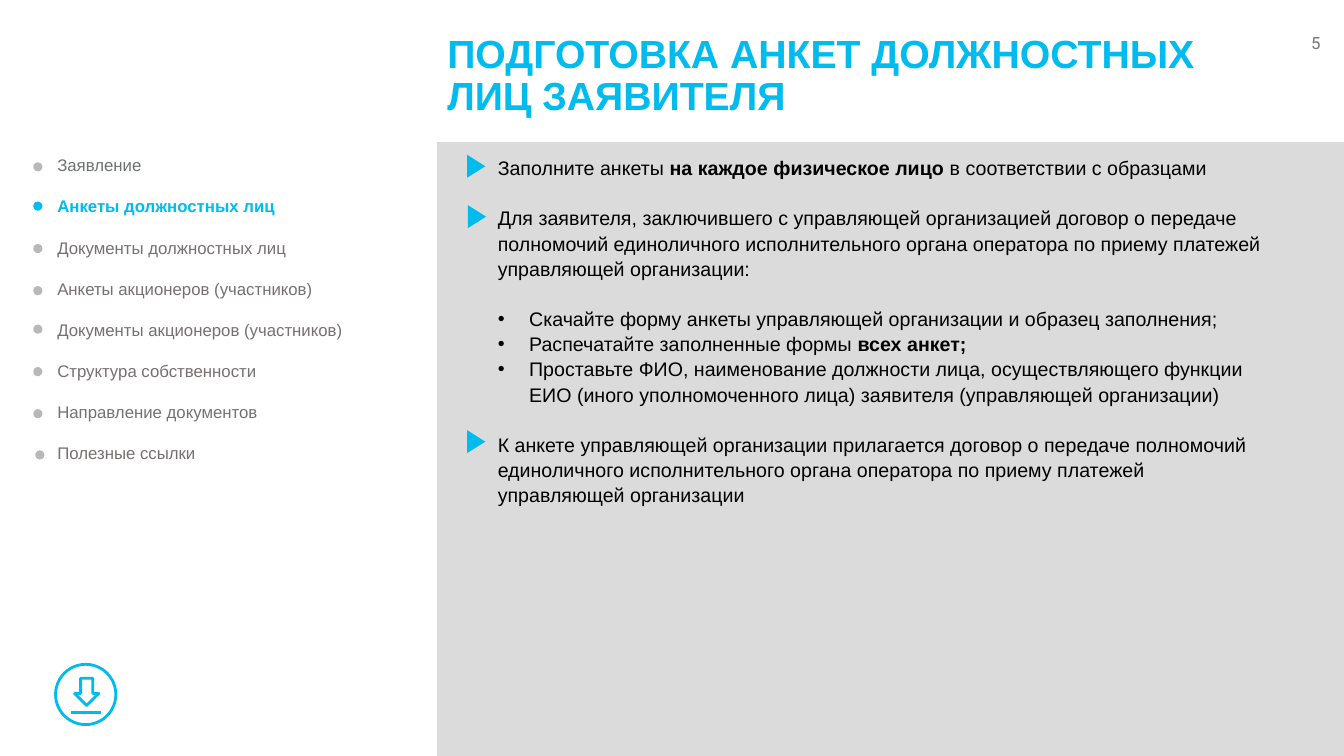
"""Build the slide about preparing questionnaires of the applicant's officers."""
from lxml.etree import SubElement
from pptx import Presentation
from pptx.dml.color import RGBColor
from pptx.enum.shapes import MSO_CONNECTOR, MSO_SHAPE
from pptx.enum.text import MSO_ANCHOR, MSO_AUTO_SIZE, PP_ALIGN
from pptx.oxml.ns import qn
from pptx.util import Cm, Pt

CYAN = RGBColor(0x00, 0xBB, 0xEE)
PANEL_GREY = RGBColor(0xDB, 0xDB, 0xDC)
DOT_GREY = RGBColor(0xB7, 0xB8, 0xB9)
FIRST_GREY = RGBColor(0x6F, 0x71, 0x71)
MENU_GREY = RGBColor(0x76, 0x71, 0x71)
NUMBER_GREY = RGBColor(0x74, 0x77, 0x7B)
BLACK = RGBColor(0x00, 0x00, 0x00)

TITLE = "ПОДГОТОВКА АНКЕТ ДОЛЖНОСТНЫХ ЛИЦ ЗАЯВИТЕЛЯ"
MENU = [
    ("Заявление", 0.84, 4.09),
    ("Анкеты должностных лиц", 0.84, 5.08),
    ("Документы должностных лиц", 0.84, 6.15),
    ("Анкеты акционеров (участников)", 0.84, 7.21),
    ("Документы акционеров (участников)", 0.84, 8.18),
    ("Структура собственности", 0.84, 9.25),
    ("Направление документов", 0.84, 10.31),
    ("Полезные ссылки", 0.89, 11.35),
]
CURRENT = 1
STEPS = [
    (False, 0, [("Заполните анкеты ", False),
                ("на каждое физическое лицо ", True),
                ("в соответствии с образцами", False)]),
    (False, 18, [("Для заявителя, заключившего с управляющей организацией договор "
                  "о передаче полномочий единоличного исполнительного органа "
                  "оператора по приему платежей управляющей организации:", False)]),
    (True, 18, [("Скачайте форму анкеты управляющей организации и образец "
                 "заполнения;", False)]),
    (True, 0, [("Распечатайте заполненные формы ", False), ("всех анкет;", True)]),
    (True, 0, [("Проставьте ФИО, наименование должности лица, осуществляющего "
                "функции ЕИО (иного уполномоченного лица) заявителя "
                "(управляющей организации)", False)]),
    (False, 18, [("К анкете управляющей организации прилагается договор о передаче "
                  "полномочий единоличного исполнительного органа оператора по "
                  "приему платежей управляющей организации", False)]),
]
MARKERS = [(11.71, 3.96), (11.73, 5.23), (11.71, 10.9)]


def place(box, left, top, width, height, anchor=MSO_ANCHOR.TOP):
    """Move a text holder and fix its frame settings."""
    box.left, box.top, box.width, box.height = map(Cm, (left, top, width, height))
    frame = box.text_frame
    frame.word_wrap = True
    frame.auto_size = MSO_AUTO_SIZE.NONE
    frame.vertical_anchor = anchor
    return frame


def add_span(para, text, size, colour, bold=False, font="Arial"):
    """Append one formatted run."""
    span = para.add_run()
    span.text = text
    span.font.name = font
    span.font.size = Pt(size)
    span.font.bold = bold
    span.font.color.rgb = colour


def next_paragraph(frame, number):
    """Return the first paragraph or a new one."""
    return frame.add_paragraph() if number else frame.paragraphs[0]


def set_bullet(para, bulleted, margin=0.0, indent=0.0):
    """Set the bullet and the indents of a list paragraph."""
    properties = para._p.get_or_add_pPr()
    properties.set("marL", str(Cm(margin)))
    properties.set("indent", str(Cm(indent)))
    if bulleted:
        SubElement(properties, qn("a:buFont"), typeface="Arial")
        SubElement(properties, qn("a:buChar"), char="•")
    else:
        SubElement(properties, qn("a:buNone"))


def add_figure(page, kind, left, top, width, height, fill=None):
    """Add a filled shape, or a cyan outline when no fill is given."""
    figure = page.shapes.add_shape(kind, *map(Cm, (left, top, width, height)))
    figure.shadow.inherit = False
    if fill is None:
        figure.fill.background()
        figure.line.color.rgb = CYAN
        figure.line.width = Pt(2)
    else:
        figure.fill.solid()
        figure.fill.fore_color.rgb = fill
        figure.line.fill.background()
    return figure


def add_title(page):
    """Fill the title placeholder."""
    frame = place(page.shapes.title, 11.02, 0.1, 21.56, 3.68, MSO_ANCHOR.MIDDLE)
    para = frame.paragraphs[0]
    para.alignment = PP_ALIGN.LEFT
    para.line_spacing = 0.9
    add_span(para, TITLE, 28, CYAN, True)


def add_menu(page):
    """Fill the section menu and draw its dots."""
    frame = place(page.placeholders[1], 1.19, 3.78, 9.37, 8.1)
    for number, (text, left, top) in enumerate(MENU):
        current = number == CURRENT
        para = next_paragraph(frame, number)
        set_bullet(para, False)
        para.space_before = Pt(0)
        para.space_after = Pt(15)
        grey = MENU_GREY if number else FIRST_GREY
        add_span(para, text, 12, CYAN if current else grey, current)
        add_figure(page, MSO_SHAPE.OVAL, left, top, 0.23, 0.23,
                   CYAN if current else DOT_GREY)


def add_steps(page):
    """Fill the instructions and draw their triangle markers."""
    frame = place(page.placeholders[2], 11.02, 3.76, 21.03, 9.86)
    for number, (bulleted, gap, spans) in enumerate(STEPS):
        para = next_paragraph(frame, number)
        margin, indent = (2.06, -0.79) if bulleted else (1.27, 0)
        set_bullet(para, bulleted, margin, indent)
        para.line_spacing = 1.07
        para.space_before = Pt(gap)
        for text, bold in spans:
            add_span(para, text, 14, BLACK, bold)
    for left, top in MARKERS:
        marker = add_figure(page, MSO_SHAPE.ISOSCELES_TRIANGLE,
                            left, top, 0.58, 0.46, CYAN)
        marker.rotation = 90


def add_download_icon(page):
    """Draw the circled download arrow."""
    add_figure(page, MSO_SHAPE.OVAL, 1.4, 16.74, 1.52, 1.52)
    add_figure(page, MSO_SHAPE.DOWN_ARROW, 1.88, 17.09, 0.61, 0.69)
    base = page.shapes.add_connector(MSO_CONNECTOR.STRAIGHT,
                                     *map(Cm, (1.8, 17.96, 2.54, 17.96)))
    base.line.color.rgb = CYAN
    base.line.width = Pt(2)
    SubElement(base._element.spPr, qn("a:effectLst"))


def add_page_number(page):
    """Write the page number in the upper right corner."""
    box = page.shapes.add_textbox(0, 0, 0, 0)
    para = place(box, 27.38, 0.71, 6.15, 0.76).paragraphs[0]
    para.alignment = PP_ALIGN.RIGHT
    add_span(para, "5", 12, NUMBER_GREY, font="Roboto")


def main():
    """Build and save the deck."""
    deck = Presentation()
    deck.slide_width, deck.slide_height = Cm(33.87), Cm(19.05)
    page = deck.slides.add_slide(deck.slide_layouts.get_by_name("Two Content"))
    panel = add_figure(page, MSO_SHAPE.RECTANGLE, 11.02, 3.58, 22.85, 15.47, PANEL_GREY)
    page.shapes.title.element.addprevious(panel.element)
    add_title(page)
    add_menu(page)
    add_steps(page)
    add_download_icon(page)
    add_page_number(page)
    deck.save("out.pptx")


if __name__ == "__main__":
    main()
